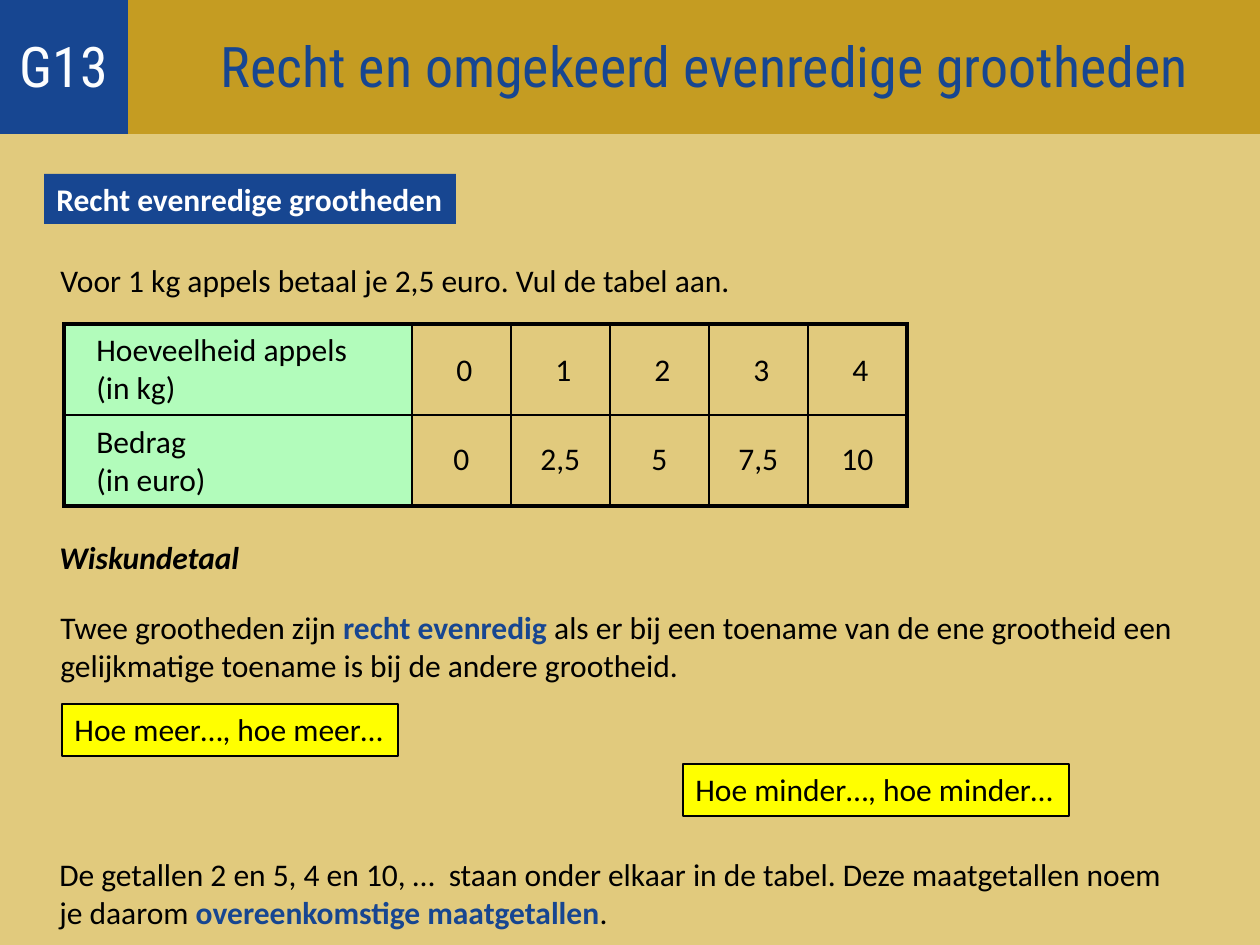
from dataclasses import dataclass

from lxml import etree
from pptx import Presentation
from pptx.dml.color import RGBColor
from pptx.enum.shapes import MSO_SHAPE
from pptx.enum.text import MSO_ANCHOR, MSO_AUTO_SIZE, PP_ALIGN
from pptx.oxml.ns import qn
from pptx.slide import Slide
from pptx.util import Pt

RECTANGLE = MSO_SHAPE.RECTANGLE
TOP, MIDDLE = MSO_ANCHOR.TOP, MSO_ANCHOR.MIDDLE
LEFT, CENTER = PP_ALIGN.LEFT, PP_ALIGN.CENTER
NO_FIT, GROW = MSO_AUTO_SIZE.NONE, MSO_AUTO_SIZE.SHAPE_TO_FIT_TEXT
EMU_PER_PX = 914400 / 126
TITLE_ONLY = 5


@dataclass(frozen=True)
class Theme:
    page: str = "E1CA7D"
    banner: str = "C59C22"
    blue: str = "174691"
    label: str = "B2FCBB"
    highlight: str = "FFFF00"
    ink: str = "000000"
    white: str = "FFFFFF"
    code: str = "FCFDFE"
    body_font: str = "Calibri"
    title_font: str = "Roboto Condensed"
    body_size: int = 18
    title_size: int = 32
    thin: float = 1
    thick: float = 2.25
    outline: float = 0.75


THEME = Theme()


@dataclass(frozen=True)
class Span:
    text: str
    color: str = THEME.ink
    bold: bool = False
    italic: bool = False
    font: str = THEME.body_font
    size: int = THEME.body_size


@dataclass(frozen=True)
class Box:
    left: int
    top: int
    width: int
    height: int
    paras: tuple[tuple[Span, ...], ...]
    wrap: bool = False
    fill: str | None = None
    line: str | None = None


def px(value: float) -> int:
    return round(value * EMU_PER_PX)


def apply(target, values: dict) -> None:
    for name, value in values.items():
        setattr(target, name, value)


def paint(fill, color: str) -> None:
    fill.solid()
    fill.fore_color.rgb = RGBColor.from_string(color)


def write(frame, paras: tuple[tuple[Span, ...], ...], align, **layout) -> None:
    apply(frame, layout)
    for index, spans in enumerate(paras):
        para = frame.add_paragraph() if index else frame.paragraphs[0]
        para.alignment = align
        for span in spans:
            run = para.add_run()
            run.text = span.text
            apply(run.font, {"name": span.font, "size": Pt(span.size),
                             "bold": span.bold, "italic": span.italic})
            run.font.color.rgb = RGBColor.from_string(span.color)


def draw_box(slide: Slide, box: Box) -> None:
    place = [px(value) for value in (box.left, box.top, box.width, box.height)]
    if box.fill:
        shape = slide.shapes.add_shape(RECTANGLE, *place)
        shape.shadow.inherit = False
        paint(shape.fill, box.fill)
        if box.line:
            paint(shape.line.fill, box.line)
            shape.line.width = Pt(THEME.outline)
        else:
            shape.line.fill.background()
    else:
        shape = slide.shapes.add_textbox(*place)
    write(shape.text_frame, box.paras, LEFT, word_wrap=box.wrap,
          auto_size=GROW, vertical_anchor=TOP)


def draw_banner(slide: Slide) -> None:
    height = 138
    title = slide.shapes.title
    code = slide.shapes.add_shape(RECTANGLE, 0, px(-4), px(128), px(height))
    code.shadow.inherit = False
    code.line.fill.background()
    apply(title, {"left": 0, "top": px(-4), "width": px(1260), "height": px(height)})
    for shape, fill, text, color, inset in (
        (title, THEME.banner, "Recht en omgekeerd evenredige grootheden", THEME.blue, 163),
        (code, THEME.blue, "G13", THEME.code, 13),
    ):
        paint(shape.fill, fill)
        span = Span(text, color, font=THEME.title_font, size=THEME.title_size)
        write(shape.text_frame, ((span,),), CENTER, word_wrap=True, auto_size=NO_FIT,
              vertical_anchor=MIDDLE, margin_left=px(inset), margin_right=px(13))


def set_border(cell, side: str, width: float) -> None:
    line = etree.SubElement(cell._tc.get_or_add_tcPr(), qn(f"a:{side}"), w=str(Pt(width)))
    fill = etree.SubElement(line, qn("a:solidFill"))
    etree.SubElement(fill, qn("a:srgbClr"), val=THEME.ink)


def draw_grid(slide: Slide, rows: int, columns: int) -> None:
    label_width, value_width, row_height = 348, 99, 91
    width = label_width + (columns - 1) * value_width
    table = slide.shapes.add_table(rows, columns, px(64), px(324),
                                   px(width), px(rows * row_height)).table
    apply(table, {"first_row": False, "horz_banding": False})
    for row in table.rows:
        row.height = px(row_height)
    for index, column in enumerate(table.columns):
        column.width = px(value_width if index else label_width)
    for row in range(rows):
        for column in range(columns):
            cell = table.cell(row, column)
            edges = {"lnL": column == 0, "lnR": column == columns - 1,
                     "lnT": row == 0, "lnB": row == rows - 1}
            for side, outer in edges.items():
                set_border(cell, side, THEME.thick if outer else THEME.thin)
            if column:
                cell.fill.background()
            else:
                paint(cell.fill, THEME.label)


def draw_values(slide: Slide, values: tuple[str, ...], first_center: int, top: int) -> None:
    widths = {1: 41, 2: 57, 3: 65}
    for index, value in enumerate(values):
        width = widths[len(value)]
        left = first_center + index * 99 - width // 2
        draw_box(slide, Box(left, top, width, 50, ((Span(value),),)))


BOXES = (
    Box(48, 255, 701, 50, ((Span("Voor 1 kg appels betaal je 2,5 euro. Vul de tabel aan."),),)),
    Box(84, 324, 277, 88, ((Span("Hoeveelheid appels"),), (Span("(in kg)"),))),
    Box(84, 416, 136, 88, ((Span("Bedrag"),), (Span("(in euro)"),))),
    Box(47, 532, 207, 50, ((Span("Wiskundetaal", bold=True, italic=True),),)),
    Box(48, 602, 1160, 88, ((
        Span("Twee grootheden zijn "),
        Span("recht evenredig ", THEME.blue, bold=True),
        Span("als er bij een toename van de ene grootheid een gelijkmatige "
             "toename is bij de andere grootheid."),
    ),), wrap=True),
    Box(47, 849, 1131, 88, ((
        Span("De getallen 2 en 5, 4 en 10, …  staan onder elkaar in de tabel. "
             "Deze maatgetallen noem je daarom "),
        Span("overeenkomstige maatgetallen", THEME.blue, bold=True),
        Span("."),
    ),), wrap=True),
    Box(62, 704, 336, 52, ((Span("Hoe meer…, hoe meer…"),),),
        fill=THEME.highlight, line=THEME.ink),
    Box(683, 764, 386, 52, ((Span("Hoe minder…, hoe minder…"),),),
        fill=THEME.highlight, line=THEME.ink),
    Box(44, 174, 412, 50, ((Span("Recht evenredige grootheden", THEME.white, bold=True),),),
        fill=THEME.blue),
)


def main() -> None:
    deck = Presentation()
    apply(deck, {"slide_width": px(1260), "slide_height": px(945)})
    slide = deck.slides.add_slide(deck.slide_layouts[TITLE_ONLY])
    paint(slide.background.fill, THEME.page)
    draw_banner(slide)
    draw_grid(slide, rows=2, columns=6)
    for box in BOXES:
        draw_box(slide, box)
    draw_values(slide, ("0", "1", "2", "3", "4"), 464, 344)
    draw_values(slide, ("0", "2,5", "5", "7,5", "10"), 461, 433)
    deck.save("out.pptx")


if __name__ == "__main__":
    main()
